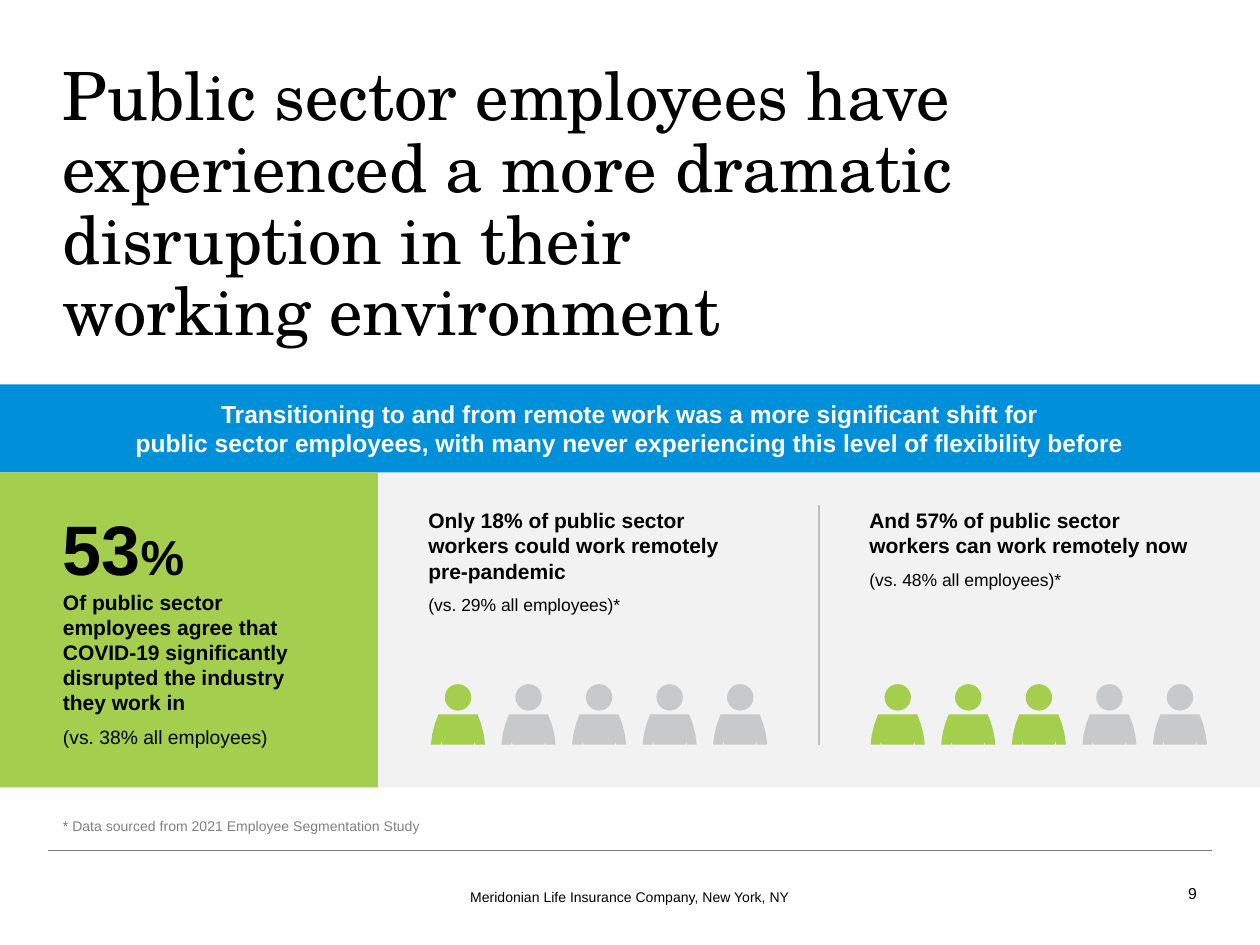
from copy import deepcopy

from lxml.etree import SubElement
from pptx import Presentation
from pptx.dml.color import RGBColor
from pptx.enum.shapes import MSO_CONNECTOR, MSO_SHAPE
from pptx.enum.text import MSO_ANCHOR, PP_ALIGN
from pptx.oxml.ns import qn
from pptx.util import Inches, Pt

GREEN, BLUE, GRAY, PANEL = "A4CE4E", "0090DA", "C8C9CA", "F2F2F2"

TITLE = ("Public sector employees have experienced a more dramatic "
         "disruption in their\nworking environment")
BANNER = ("Transitioning to and from remote work was a more significant shift for\n"
          "public sector employees, with many never experiencing this level of flexibility before")
FOOTNOTE = "* Data sourced from 2021 Employee Segmentation Study"
FOOTER = "Meridonian Life Insurance Company, New York, NY"
PAGE_NUMBER = "9"

KEY_FIGURE = [
    [("53", 40, True), ("%\n", 28, True),
     ("Of public sector employees agree that COVID-19 significantly "
      "disrupted the industry they work in", 12, True)],
    [("(vs. 38% all employees)", 11, False)],
]
COMPARISONS = [
    {"left": 3, "people_left": 3.42, "highlighted": 1,
     "heading": "Only 18% of public sector workers could work remotely\npre-pandemic",
     "note": "(vs. 29% all employees)*"},
    {"left": 6.5, "people_left": 6.91, "highlighted": 3,
     "heading": "And 57% of public sector\nworkers can work remotely now",
     "note": "(vs. 48% all employees)*"},
]

PEOPLE_COUNT, PEOPLE_STEP = 5, 0.56
HEAD_TOP, BODY_TOP, BODY_WIDTH = 5.43, 5.67, 0.43
LEFT_HALF = [(0.06, 0), (0.03, 0.08), (0.01, 0.16), (0, 0.24),
             (0.08, 0.24), (0.08, 0.21), (0.09, 0.24)]
BODY = LEFT_HALF + [(BODY_WIDTH - x, y) for x, y in reversed(LEFT_HALF)]


def color(value):
    return RGBColor.from_string(value)


def paint(shape, fill):
    shape.shadow.inherit = False
    shape.fill.solid()
    shape.fill.fore_color.rgb = color(fill)
    shape.line.fill.background()
    return shape


def add_rectangle(shapes, left, top, width, height, fill):
    return paint(shapes.add_shape(MSO_SHAPE.RECTANGLE, Inches(left), Inches(top),
                                  Inches(width), Inches(height)), fill)


def add_box(shapes, left, top, width, height):
    return shapes.add_textbox(Inches(left), Inches(top), Inches(width), Inches(height))


def add_run(paragraph, text, size, bold, font, fill):
    for index, line in enumerate(text.split("\n")):
        if index:
            paragraph.add_line_break()
            paragraph._p[-1].append(deepcopy(run._r.rPr))
        if line:
            run = paragraph.add_run()
            run.text = line
            run.font.size, run.font.bold, run.font.name = Pt(size), bold, font
            run.font.color.rgb = color(fill)


def write(shape, paragraphs, font="Arial", fill="000000", align=PP_ALIGN.LEFT,
          anchor=MSO_ANCHOR.TOP, margins=(0, 0), before=0, after=0, spacing=None,
          hanging=0, wrap=True):
    frame = shape.text_frame
    frame.word_wrap, frame.vertical_anchor = wrap, anchor
    frame.margin_left = frame.margin_right = Inches(margins[0])
    frame.margin_top = frame.margin_bottom = Inches(margins[1])
    for index, runs in enumerate(paragraphs):
        paragraph = frame.add_paragraph() if index else frame.paragraphs[0]
        paragraph.alignment, paragraph.line_spacing = align, spacing
        paragraph.space_before = Pt(before if index else 0)
        paragraph.space_after = Pt(after)
        if hanging:
            properties = paragraph._p.get_or_add_pPr()
            properties.set("marL", str(Inches(hanging)))
            properties.set("indent", str(-Inches(hanging)))
        for text, size, bold in runs:
            add_run(paragraph, text, size, bold, font, fill)


def add_line(shapes, start, end, line_color, width):
    line = shapes.add_connector(MSO_CONNECTOR.STRAIGHT,
                                *[Inches(value) for value in start + end])
    line.line.color.rgb = color(line_color)
    line.line.width = Pt(width)
    SubElement(line._element.spPr, qn("a:effectLst"))


def add_person(shapes, left, fill):
    points = [(Inches(left + x), Inches(BODY_TOP + y)) for x, y in BODY]
    builder = shapes.build_freeform(*points[0])
    builder.add_line_segments(points[1:], close=True)
    paint(builder.convert_to_shape(), fill)
    paint(shapes.add_shape(MSO_SHAPE.OVAL, Inches(left + 0.11), Inches(HEAD_TOP),
                           Inches(0.21), Inches(0.21)), fill)


def add_comparison(shapes, comparison):
    write(add_box(shapes, comparison["left"], 3.98, 3.5, 0.63),
          [[(comparison["heading"], 12, True)], [(comparison["note"], 10, False)]],
          margins=(0.4, 0.05), after=6)
    people = shapes.add_group_shape().shapes
    for index in range(PEOPLE_COUNT):
        add_person(people, comparison["people_left"] + index * PEOPLE_STEP,
                   GREEN if index < comparison["highlighted"] else GRAY)


def main():
    presentation = Presentation()
    presentation.slide_width, presentation.slide_height = Inches(10), Inches(7.5)
    shapes = presentation.slides.add_slide(presentation.slide_layouts[6]).shapes

    write(add_box(shapes, 9.2, 6.96, 0.3, 0.25), [[(PAGE_NUMBER, 9, False)]],
          align=PP_ALIGN.RIGHT, anchor=MSO_ANCHOR.MIDDLE, margins=(0, 0.05))
    add_line(shapes, (0.38, 6.75), (9.62, 6.75), "75787B", 0.75)
    write(add_box(shapes, 3.56, 7, 2.88, 0.24), [[(FOOTER, 8, False)]],
          align=PP_ALIGN.CENTER, margins=(0.1, 0.05), wrap=False)

    add_rectangle(shapes, 0, 3.75, 10, 2.5, PANEL)
    write(add_box(shapes, 0.5, 0.5, 9, 1.1), [[(TITLE, 38, False)]],
          font="TeX Gyre Schola", spacing=0.9)
    write(add_box(shapes, 0.5, 6.25, 9, 0.37), [[(FOOTNOTE, 8, False)]],
          fill="808080", anchor=MSO_ANCHOR.BOTTOM, hanging=0.06)
    write(add_rectangle(shapes, 0, 3.05, 10, 0.7, BLUE), [[(BANNER, 14, True)]],
          fill="FFFFFF", align=PP_ALIGN.CENTER, anchor=MSO_ANCHOR.MIDDLE,
          margins=(0.5, 0.05))
    add_rectangle(shapes, 0, 3.75, 3, 2.5, GREEN)
    write(add_box(shapes, 0.5, 4, 2.1, 1.95), KEY_FIGURE,
          anchor=MSO_ANCHOR.MIDDLE, before=6)

    add_line(shapes, (6.5, 4.01), (6.5, 5.91), "BFBFBF", 1)
    for comparison in COMPARISONS:
        add_comparison(shapes, comparison)

    presentation.save("out.pptx")


if __name__ == "__main__":
    main()
